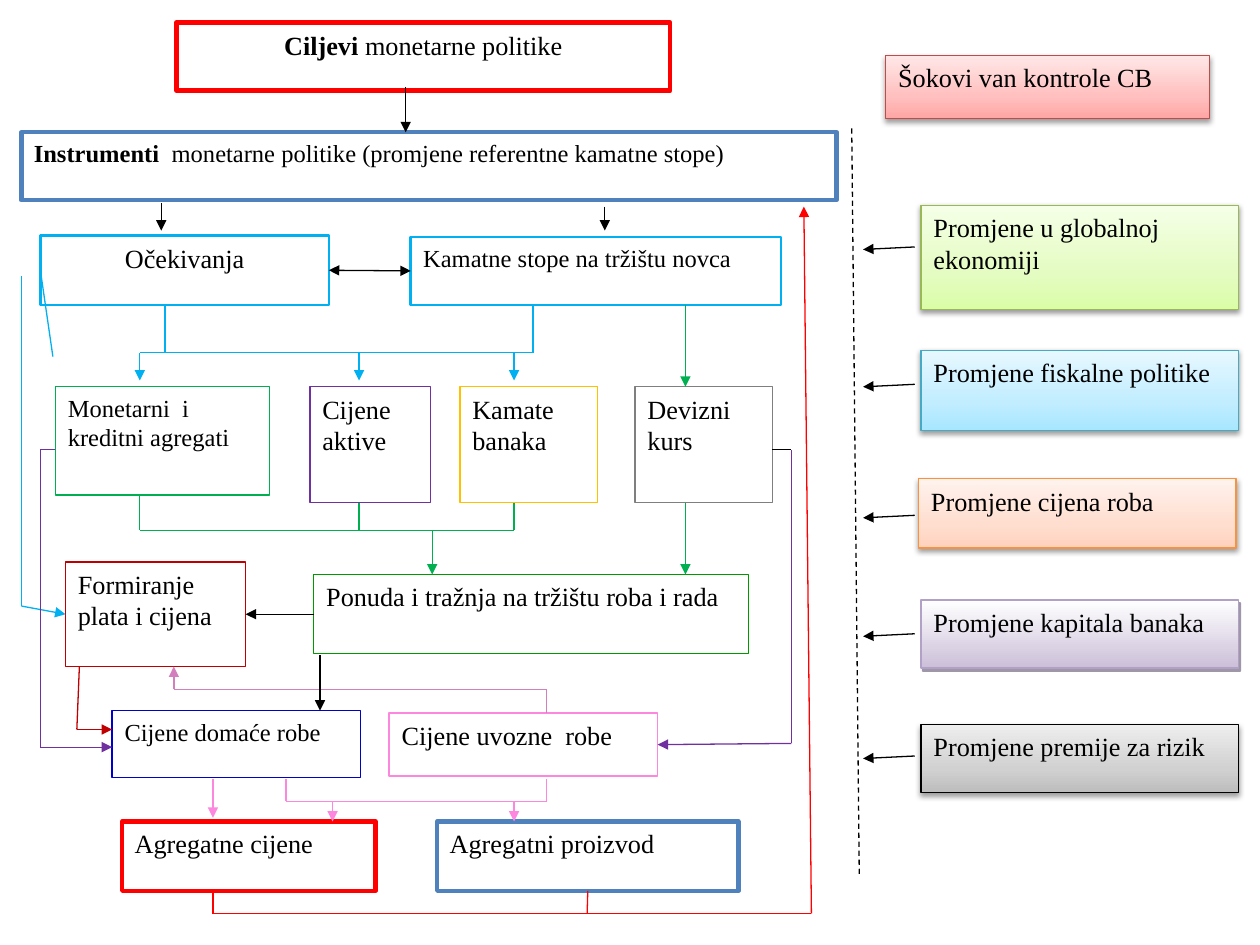
import pptx
import pptx.util
import pptx.dml.color
import pptx.enum.dml
import pptx.enum.shapes
import pptx.enum.text
import pptx.oxml
import pptx.oxml.ns
from lxml import etree

FONT = "Times New Roman"
COLOURS = {
    "black": "000000", "white": "FFFFFF", "red": "FF0000", "steel": "4F81BD",
    "sky": "00B0F0", "purple": "7030A0", "green": "00B050", "gold": "FFC000",
    "grey": "7F7F7F", "crimson": "C00000", "leaf": "009900", "navy": "0000CC",
    "pink": "FD87DE", "mauve": "D37FBD",
    "salmon": "BF4C48", "lime": "98B955", "aqua": "46AAC5", "orange": "F69240",
    "lilac": "B2A1C7",
}

# key: (bold lead, text, size, left, top, width, height, outline, outline width)
STAGES = {
    "goals": ("Ciljevi ", "monetarne politike", 15, 1.4, 0.18, 3.92, 0.54, "red", 2.5),
    "instruments": ("Instrumenti  ", "monetarne politike (promjene referentne kamatne stope)",
                    14, 0.17, 1.05, 6.47, 0.54, "steel", 2.5),
    "rates": ("", "Kamatne stope na tržištu novca", 14, 3.26, 1.88, 2.94, 0.54, "sky", 1.5),
    "expectations": ("", "Očekivanja", 15, 0.32, 1.87, 2.29, 0.55, "sky", 1.5),
    "assets": ("", "Cijene  aktive", 15, 2.46, 3.07, 0.96, 0.92, "purple", 0.75),
    "money": ("", "Monetarni  i kreditni agregati", 14, 0.44, 3.07, 1.7, 0.86, "green", 0.75),
    "lending": ("", "Kamate banaka", 15, 3.65, 3.07, 1.09, 0.92, "gold", 0.75),
    "exchange": ("", "Devizni kurs", 15, 5.04, 3.07, 1.09, 0.92, "grey", 0.75),
    "wages": ("", "Formiranje plata i cijena", 15, 0.52, 4.46, 1.43, 0.83, "crimson", 0.75),
    "demand": ("", "Ponuda i tražnja na tržištu roba i rada", 15, 2.49, 4.56, 3.45, 0.63,
               "leaf", 0.75),
    "domestic": ("", "Cijene domaće robe", 14, 0.89, 5.64, 1.97, 0.53, "navy", 0.75),
    "imports": ("", "Cijene uvozne  robe", 15, 3.09, 5.66, 2.13, 0.5, "pink", 1),
    "prices": ("", "Agregatne cijene", 15, 0.97, 6.52, 2.01, 0.55, "red", 2.5),
    "output": ("", "Agregatni proizvod", 15, 3.47, 6.52, 2.39, 0.55, "steel", 2.5),
}
CENTRED = {"goals", "expectations"}

# text, left, top, width, height, outline, gradient stops from the bottom up, arrow level
SHOCKS = [
    ("Šokovi van kontrole CB", 7.03, 0.44, 2.57, 0.5, "salmon",
     [(0, "FFA6A5"), (35, "FFC0BF"), (100, "FFE7E7")], None),
    ("Promjene u globalnoj ekonomiji", 7.31, 1.63, 2.52, 0.83, "lime",
     [(0, "DAFDA7"), (35, "E4FCC2"), (100, "F5FFE7")], 1.96),
    ("Promjene fiskalne politike", 7.31, 2.78, 2.52, 0.64, "aqua",
     [(0, "A7E6FF"), (35, "C1EDFF"), (100, "E7F8FF")], 3.05),
    ("Promjene cijena roba", 7.29, 3.8, 2.52, 0.55, "orange",
     [(0, "FFD2BD"), (35, "FFDED0"), (100, "FFF2ED")], 4.09),
    ("Promjene kapitala banaka", 7.31, 4.76, 2.52, 0.54, "lilac",
     [(0, "CCC0D9"), (100, "FFFFFF")], 5.03),
    ("Promjene premije za rizik", 7.31, 5.75, 2.52, 0.54, "black",
     [(0, "BDBDBD"), (35, "D1D1D1"), (100, "EEEEEE")], 6.0),
]
# shadow: colour, opacity %, blur pt, distance pt, direction in degrees
SOFT_SHADOW = ("000000", 38, 3.1, 1.6, 90)
HARD_SHADOW = ("3F3151", 50, 0, 2.2, 63)

# Shared columns and rows of the connecting lines
MONEY_X, ASSETS_X, LENDING_X, EXCHANGE_X, IMPORTS_X = 1.11, 2.85, 4.08, 5.44, 4.34
CHANNEL_Y, POOL_Y, IMPORT_Y, AGGREGATE_Y, FEEDBACK_Y = 2.8, 4.21, 5.47, 6.36, 7.25
TOP, LEFT, BOTTOM, RIGHT = range(4)

# colour, points (x, y) or (stage, side), arrowheads: "" none, ">" last end, "<>" both
ROUTES = [
    ("black", [(3.22, 0.69), (3.22, 1.05)], ">"),
    ("black", [(4.8, 1.64), (4.8, 1.83)], ">"),
    ("black", [(1.28, 1.61), (1.28, 1.83)], ">"),
    ("black", [("expectations", RIGHT), ("rates", LEFT)], "<>"),
    ("sky", [(1.31, 2.42), (1.31, CHANNEL_Y)], ""),
    ("sky", [(4.23, 2.42), (4.23, CHANNEL_Y), (MONEY_X, CHANNEL_Y)], ""),
    *[("sky", [(x, CHANNEL_Y), (x, 3.02)], ">") for x in (MONEY_X, ASSETS_X, LENDING_X)],
    ("green", [(EXCHANGE_X, 2.42), (EXCHANGE_X, 3.07)], ">"),
    ("sky", [(0.17, 2.19), (0.17, 4.81), ("wages", LEFT)], ">"),
    ("sky", [(0.42, 2.83), (0.32, 2.14)], ""),
    ("green", [(MONEY_X, 3.93), (MONEY_X, POOL_Y), (LENDING_X, POOL_Y), (LENDING_X, 3.99)], ""),
    ("green", [(ASSETS_X, 3.99), (ASSETS_X, POOL_Y)], ""),
    ("green", [(3.43, POOL_Y), (3.43, 4.56)], ">"),
    ("green", [(EXCHANGE_X, 3.99), (EXCHANGE_X, 4.56)], ">"),
    ("black", [("demand", LEFT), ("wages", RIGHT)], ">"),
    ("black", [(6.13, 3.57), (6.28, 3.57)], ""),
    ("purple", [(6.28, 3.57), (6.28, 5.9), ("imports", RIGHT)], ">"),
    ("mauve", [(IMPORTS_X, 5.66), (IMPORTS_X, IMPORT_Y), (1.38, IMPORT_Y), (1.38, 5.29)], ">"),
    ("black", [(2.54, 5.2), (2.54, 5.64)], ">"),
    ("purple", [(0.44, 3.57), (0.32, 3.57), (0.32, 5.93), (0.89, 5.93)], ">"),
    ("crimson", [(0.63, 5.29), (0.61, 5.79), (0.89, 5.79)], ">"),
    ("pink", [(1.69, 6.18), (1.69, 6.49)], ">"),
    ("pink", [(2.27, 6.18), (2.27, AGGREGATE_Y), (IMPORTS_X, AGGREGATE_Y), (IMPORTS_X, 6.18)], ""),
    *[("pink", [(x, AGGREGATE_Y), (x, 6.52)], ">") for x in (2.64, LENDING_X)],
    ("red", [("output", BOTTOM), (4.66, FEEDBACK_Y)], ""),
    ("red", [(1.69, 7.07), (1.69, FEEDBACK_Y), (6.44, FEEDBACK_Y), (6.38, 1.64)], ">"),
    *[("black", [(7.26, shock[-1]), (6.85, shock[-1] + 0.02)], ">") for shock in SHOCKS if shock[-1]],
]

inches, points = pptx.util.Inches, pptx.util.Pt
qn = pptx.oxml.ns.qn


def rgb(name):
    return pptx.dml.color.RGBColor.from_string(COLOURS[name])


def style_box(box, lead, text, size, frame, outline, width, centred=False):
    box.left, box.top, box.width, box.height = map(inches, frame)
    box.shadow.inherit = False
    box.fill.solid()
    box.fill.fore_color.rgb = rgb("white")
    box.line.color.rgb = rgb(outline)
    box.line.width = points(width)
    words = box.text_frame
    words.word_wrap = True
    words.auto_size = pptx.enum.text.MSO_AUTO_SIZE.NONE
    words.vertical_anchor = pptx.enum.text.MSO_ANCHOR.TOP
    paragraph = words.paragraphs[0]
    align = pptx.enum.text.PP_ALIGN
    paragraph.alignment = align.CENTER if centred else align.LEFT
    paragraph.space_after = points(10)
    for part, bold in ((lead, True), (text, False)):
        if part:
            run = paragraph.add_run()
            run.text = part
            run.font.name, run.font.size, run.font.bold = FONT, points(size), bold
            run.font.color.rgb = rgb("black")


def add_colour(parent, value):
    return etree.SubElement(parent, qn("a:srgbClr"), val=value)


def shade(box, stops, shadow):
    """Give a box a gradient from the bottom up and a drop shadow."""
    box.fill.gradient()
    box.fill.gradient_angle = 90
    properties = box._element.spPr
    stop_list = properties.find(".//" + qn("a:gsLst"))
    for old in list(stop_list):
        stop_list.remove(old)
    for share, value in stops:
        add_colour(etree.SubElement(stop_list, qn("a:gs"), pos=str(share * 1000)), value)
    value, opacity, blur, distance, direction = shadow
    outer = etree.SubElement(
        properties.find(qn("a:effectLst")), qn("a:outerShdw"),
        blurRad=str(points(blur)), dist=str(points(distance)),
        dir=str(direction * 60000), rotWithShape="0")
    etree.SubElement(add_colour(outer, value), qn("a:alpha"), val=str(opacity * 1000))


def add_line(slide, boxes, start, end, colour, head=False, tail=False):
    straight = pptx.enum.shapes.MSO_CONNECTOR.STRAIGHT
    joined = [isinstance(place[0], str) for place in (start, end)]
    ends = [(0, 0) if join else place for join, place in zip(joined, (start, end))]
    line = slide.shapes.add_connector(straight, *[inches(n) for place in ends for n in place])
    for join, place, connect in zip(joined, (start, end), (line.begin_connect, line.end_connect)):
        if join:
            connect(boxes[place[0]], place[1])
    line.line.color.rgb = rgb(colour)
    line.line.width = points(0.75)
    for wanted, tag in ((head, "a:headEnd"), (tail, "a:tailEnd")):
        if wanted:
            etree.SubElement(line.line._get_or_add_ln(), qn(tag), type="triangle")
    etree.SubElement(line._element.spPr, qn("a:effectLst"))
    return line


def main():
    deck = pptx.Presentation()
    deck.slide_width, deck.slide_height = inches(10), inches(7.5)
    slide = deck.slides.add_slide(deck.slide_layouts[5])
    rectangle = pptx.enum.shapes.MSO_SHAPE.RECTANGLE
    boxes = {}
    for key, (lead, text, size, *frame, outline, width) in STAGES.items():
        box = slide.shapes.title if key == "goals" else slide.shapes.add_shape(rectangle, 0, 0, 0, 0)
        style_box(box, lead, text, size, frame, outline, width, key in CENTRED)
        boxes[key] = box
    for text, *frame, outline, stops, _ in SHOCKS:
        box = slide.shapes.add_shape(rectangle, 0, 0, 0, 0)
        hard = outline == "lilac"
        style_box(box, "", text, 15, frame, outline, 1 if hard else 0.75)
        shade(box, stops, HARD_SHADOW if hard else SOFT_SHADOW)
    divider = add_line(slide, boxes, (6.76, 1.02), (6.82, 6.96), "black")
    divider.line.dash_style = pptx.enum.dml.MSO_LINE.DASH
    for colour, stops, heads in ROUTES:
        last = len(stops) - 2
        for i, (start, end) in enumerate(zip(stops, stops[1:])):
            add_line(slide, boxes, start, end, colour, heads == "<>", bool(heads) and i == last)
    deck.save("out.pptx")


if __name__ == "__main__":
    main()
